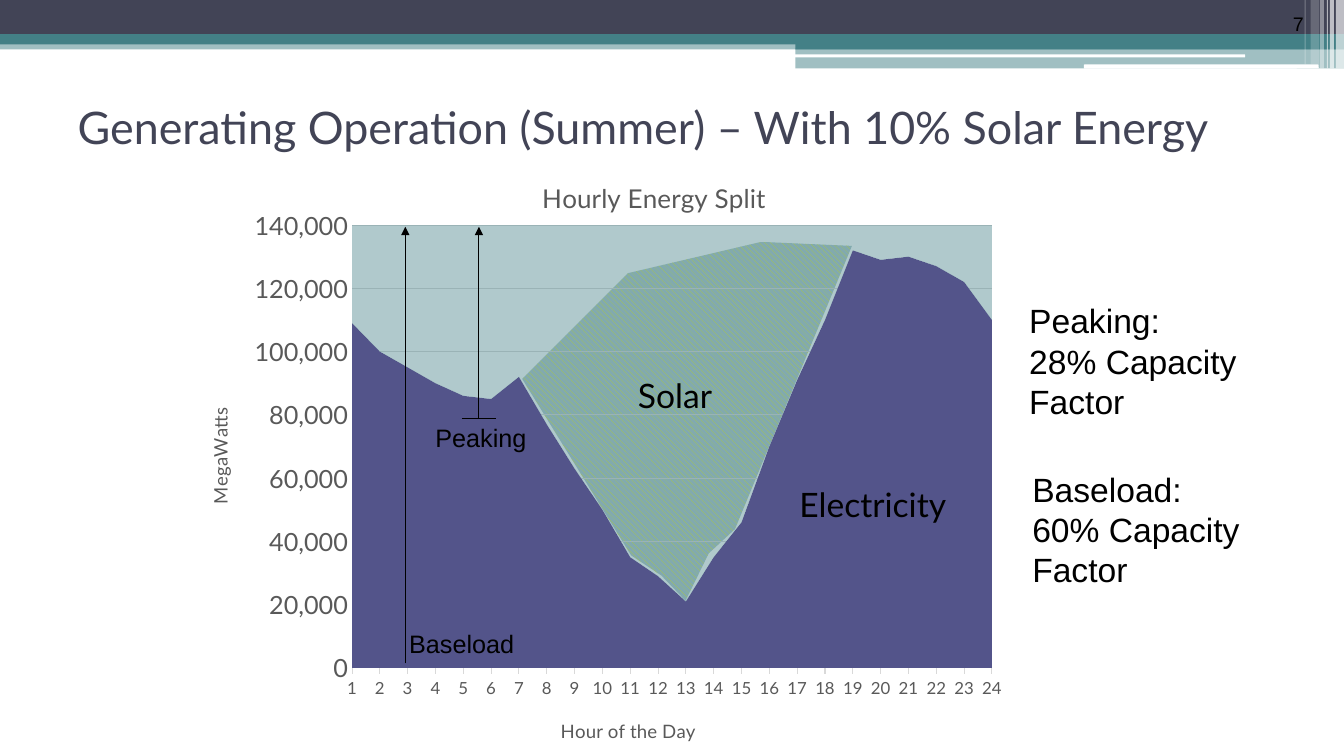
from lxml import etree
from pptx import Presentation
from pptx.chart.data import CategoryChartData
from pptx.dml.color import RGBColor
from pptx.enum.chart import XL_CHART_TYPE, XL_TICK_MARK
from pptx.enum.dml import MSO_PATTERN
from pptx.enum.shapes import MSO_CONNECTOR, MSO_SHAPE
from pptx.enum.text import MSO_ANCHOR, PP_ALIGN
from pptx.oxml import parse_xml
from pptx.oxml.ns import nsdecls, qn
from pptx.util import Inches, Pt

COLORS = {
    "ink": "000000", "navy": "424456", "teal": "438086", "white": "FFFFFF",
    "electricity": "53548A", "label": "595959", "grid": "D9D9D9",
    "hatch": "FFFF00", "hatch_back": "B0CACC",
}
WIDTH, HEIGHT = 13.33, 7.5
TITLE = "Generating Operation (Summer) – With 10% Solar Energy"

# left, top, width, height, colour, opacity in percent
HEADER_BANDS = [
    (0, 0.4, WIDTH, 0.09, "teal", 50),
    (0, 0, WIDTH, 0.34, "navy", 100),
    (0, 0.34, WIDTH, 0.1, "teal", 100),
    (7.89, 0.39, 5.44, 0.1, "teal", 100),
    (7.89, 0.48, 5.44, 0.2, "teal", 50),
]
HEADER_SLITS = [
    (7.88, 0.54, 4.47, 0.03, "white", 100),
    (10.75, 0.64, 2.33, 0.04, "white", 100),
]
# left, width, height, opacity in percent
EDGE_STRIPES = [
    (13.25, 0.08, 0.68, 65), (13.19, 0.04, 0.68, 65), (13.16, 0.01, 0.68, 60),
    (13.09, 0.04, 0.68, 40), (13, 0.08, 0.64, 20), (12.94, 0.01, 0.64, 30),
]

SOLAR_OUTLINE = [
    (8.45, 2.44), (7.55, 2.4), (6.23, 2.71), (5.18, 3.76), (6.26, 5.51),
    (6.56, 5.71), (6.8, 5.96), (7.03, 5.49), (7.29, 5.25),
]

CHART_BOX = (1.58, 1.49, 8.89, 5.93)
PLOT_SHARE = (0.215, 0.126, 0.714, 0.745)
CHART_TITLE = ("Hourly Energy Split", 18.6, (0.422, 0.041))
HOUR_TITLE = ("Hour of the Day", 13.3, (0.444, 0.948))
POWER_TITLE = ("MegaWatts", 13.3, (0.049, 0.428))
POWER_MAX = 140000
ELECTRICITY = [value * 1000 for value in (
    109, 100, 95, 90, 86, 85, 92, 77, 63, 50, 35, 29,
    21, 35, 46, 70, 91, 110, 132, 129, 130, 127, 122, 110)]

# text, left, top, width, height, font, size, alignment, anchor
LABELS = [
    ("Electricity", 7.83, 4.75, 1.92, 0.5, "Lato", 24, PP_ALIGN.LEFT, MSO_ANCHOR.TOP),
    ("Baseload:\v60% Capacity Factor", 10.14, 4.6, 2.47, 1.31, "Arial", 24,
     PP_ALIGN.LEFT, MSO_ANCHOR.TOP),
    ("Peaking:\v28% Capacity Factor", 10.11, 2.93, 2.47, 1.31, "Arial", 24,
     PP_ALIGN.LEFT, MSO_ANCHOR.TOP),
    ("Peaking", 4.02, 4.14, 1.5, 0.4, "Arial", 18, PP_ALIGN.CENTER, MSO_ANCHOR.TOP),
    ("Baseload", 3.83, 6.18, 1.5, 0.4, "Arial", 18, PP_ALIGN.CENTER, MSO_ANCHOR.TOP),
    ("Solar", 6.03, 3.67, 1.33, 0.5, "Lato", 24, PP_ALIGN.CENTER, MSO_ANCHOR.TOP),
    ("7", 11.92, 0, 1.11, 0.4, "Arial", 14, PP_ALIGN.RIGHT, MSO_ANCHOR.BOTTOM),
]
# from x, from y, to x, to y, arrowhead at the end
MARKERS = [
    (4.58, 4.15, 4.92, 4.15, False),
    (4.75, 4.15, 4.75, 2.25, True),
    (4.02, 6.58, 4.02, 2.25, True),
]


def inches(values):
    return [Inches(value) for value in values]


def color(name):
    return RGBColor.from_string(COLORS[name])


def style_font(font, name, size, tint):
    font.name, font.size, font.bold = name, Pt(size), False
    font.color.rgb = color(tint)


def set_opacity(element, percent):
    for tone in element.xpath(".//a:solidFill/a:srgbClr"):
        etree.SubElement(tone, qn("a:alpha")).set("val", str(percent * 1000))


def add_band(slide, kind, box, tint, opacity):
    band = slide.shapes.add_shape(kind, *inches(box))
    band.shadow.inherit = False
    band.fill.solid()
    band.fill.fore_color.rgb = color(tint)
    band.line.fill.background()
    if opacity < 100:
        set_opacity(band.element.spPr, opacity)


def add_header(slide):
    for *box, tint, opacity in HEADER_BANDS:
        add_band(slide, MSO_SHAPE.RECTANGLE, box, tint, opacity)
    for *box, tint, opacity in HEADER_SLITS:
        add_band(slide, MSO_SHAPE.ROUNDED_RECTANGLE, box, tint, opacity)
    for left, width, height, opacity in EDGE_STRIPES:
        add_band(slide, MSO_SHAPE.RECTANGLE, (left, 0, width, height), "white", opacity)


def add_title(slide):
    title = slide.shapes.title
    title.left, title.top, title.width, title.height = inches((0.67, 0.67, 11.92, 1.17))
    title.text_frame.text = TITLE
    title.text_frame.vertical_anchor = MSO_ANCHOR.MIDDLE
    paragraph = title.text_frame.paragraphs[0]
    paragraph.alignment = PP_ALIGN.LEFT
    style_font(paragraph.font, "Lato", 32, "navy")


def add_solar_area(slide):
    points = [tuple(inches(point)) for point in SOLAR_OUTLINE]
    builder = slide.shapes.build_freeform(*points[0], scale=1.0)
    builder.add_line_segments(points[1:], close=True)
    solar = builder.convert_to_shape()
    solar.shadow.inherit = False
    solar.fill.patterned()
    solar.fill.pattern = MSO_PATTERN.WIDE_DOWNWARD_DIAGONAL
    solar.fill.fore_color.rgb = color("hatch")
    solar.fill.back_color.rgb = color("hatch_back")
    solar.line.fill.background()


def set_layout(parent, index, shares, inner=False):
    """Give a chart part a fixed place, in shares of the chart's size."""
    for old in parent.findall(qn("c:layout")):
        parent.remove(old)
    target = '<c:layoutTarget val="inner"/>' if inner else ""
    places = "".join(f'<c:{key} val="{share}"/>' for key, share in zip("xywh", shares))
    parent.insert(index, parse_xml(
        f'<c:layout {nsdecls("c")}><c:manualLayout>{target}<c:xMode val="edge"/>'
        f'<c:yMode val="edge"/>{places}</c:manualLayout></c:layout>'))


def write_chart_title(title, content):
    text, size, place = content
    title.text_frame.text = text
    style_font(title.text_frame.paragraphs[0].font, "Lato", size, "label")
    set_layout(title._element, 1, place)


def add_energy_chart(slide):
    data = CategoryChartData()
    data.categories = [str(hour) for hour in range(1, 25)]
    data.add_series("Series 1", ELECTRICITY)
    data.add_series("Series 2", [POWER_MAX] * len(ELECTRICITY))
    chart = slide.shapes.add_chart(
        XL_CHART_TYPE.AREA_STACKED, *inches(CHART_BOX), data).chart
    style_font(chart.font, "Lato", 10, "ink")
    chart.has_legend = False
    chart.has_title = True
    write_chart_title(chart.chart_title, CHART_TITLE)

    chart.plots[0].vary_by_categories = False
    for series, tint in zip(chart.plots[0].series, ("electricity", "teal")):
        series.format.fill.solid()
        series.format.fill.fore_color.rgb = color(tint)
        series.format.line.fill.background()
    set_opacity(chart.element.xpath(".//c:ser")[1], 42)

    hours, power = chart.category_axis, chart.value_axis
    for axis, content, size in ((hours, HOUR_TITLE, 12), (power, POWER_TITLE, 18)):
        axis.has_title = True
        write_chart_title(axis.axis_title, content)
        style_font(axis.tick_labels.font, "Lato", size, "label")
        axis.minor_tick_mark = XL_TICK_MARK.NONE
    hours.has_major_gridlines = False
    hours.major_tick_mark = XL_TICK_MARK.OUTSIDE
    power.major_tick_mark = XL_TICK_MARK.NONE
    power.has_major_gridlines = True
    for line in (hours.format.line, power.major_gridlines.format.line):
        line.color.rgb = color("grid")
        line.width = Pt(0.75)
    power.format.line.fill.background()
    power.minimum_scale, power.maximum_scale, power.major_unit = 0, POWER_MAX, 20000
    power.tick_labels.number_format = "#,##0"
    power.tick_labels.number_format_is_linked = False
    turned = power.axis_title.text_frame._txBody.bodyPr
    turned.set("rot", "-5400000")
    turned.set("vert", "horz")
    chart.element.xpath(".//c:valAx/c:crossBetween")[0].set("val", "midCat")

    plot_area = chart.element.xpath("c:chart/c:plotArea")[0]
    set_layout(plot_area, 0, PLOT_SHARE, inner=True)
    clear = f'<c:spPr {nsdecls("c", "a")}><a:noFill/><a:ln><a:noFill/></a:ln></c:spPr>'
    plot_area.append(parse_xml(clear))
    chart.element.find(qn("c:chart")).addnext(parse_xml(clear))


def add_label(slide, text, box, font, size, alignment, anchor):
    frame = slide.shapes.add_textbox(*inches(box)).text_frame
    frame.word_wrap = True
    frame.vertical_anchor = anchor
    frame.text = text
    paragraph = frame.paragraphs[0]
    paragraph.alignment = alignment
    style_font(paragraph.font, font, size, "ink")


def add_marker(slide, ends, arrow):
    marker = slide.shapes.add_connector(MSO_CONNECTOR.STRAIGHT, *inches(ends))
    marker.line.color.rgb = color("ink")
    marker.line.width = Pt(0.75)
    if arrow:
        line = marker.element.spPr.find(qn("a:ln"))
        etree.SubElement(line, qn("a:tailEnd")).set("type", "triangle")
    etree.SubElement(marker.element.spPr, qn("a:effectLst"))


def main():
    deck = Presentation()
    deck.slide_width, deck.slide_height = inches((WIDTH, HEIGHT))
    slide = deck.slides.add_slide(deck.slide_layouts[5])
    add_header(slide)
    add_title(slide)
    add_solar_area(slide)
    add_energy_chart(slide)
    for *ends, arrow in MARKERS:
        add_marker(slide, ends, arrow)
    for text, *box, font, size, alignment, anchor in LABELS:
        add_label(slide, text, box, font, size, alignment, anchor)
    deck.save("out.pptx")


if __name__ == "__main__":
    main()
